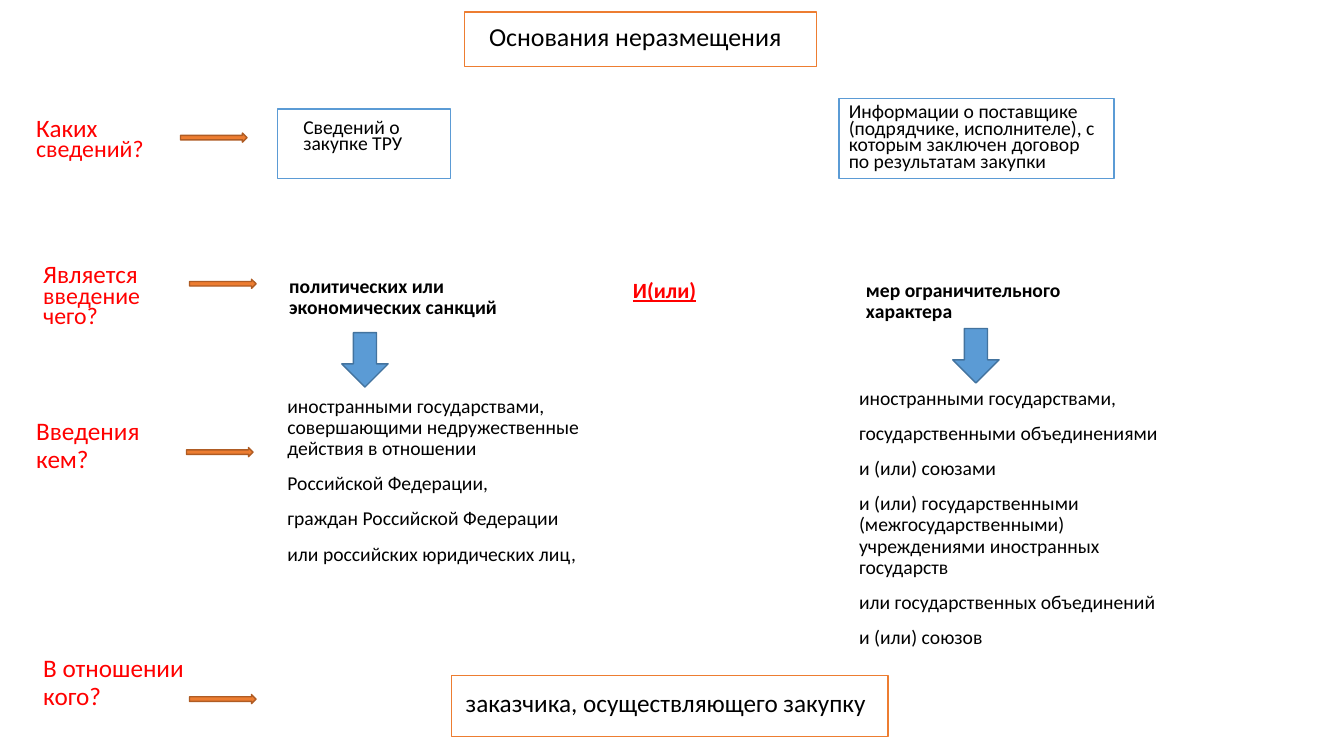
from pptx import Presentation
from pptx.dml.color import RGBColor
from pptx.enum.shapes import MSO_SHAPE
from pptx.enum.text import MSO_ANCHOR, MSO_AUTO_SIZE, PP_ALIGN
from pptx.oxml.ns import qn
from pptx.util import Inches, Pt

COLORS = {
    "white": "FFFFFF", "black": "000000", "red": "FF0000",
    "orange": "ED7D31", "brown": "AF5C24", "blue": "5B9BD5", "navy": "43739E",
}
TITLE = "Основания неразмещения"
TITLE_BOX = (4.75, 0.19, 3.28, 0.47)
TITLE_FRAME = (4.61, 0.12, 3.49, 0.54)

QUESTIONS = [
    ([("Каких", 17.9), (" сведений?", 17)], (0.26, 1.15, 1.46, 0.54), 0.7, (1.79, 1.32)),
    ([("Является", 17.9), (" введение чего?", 17)], (0.33, 2.6, 1.65, 0.74), 0.7, (1.88, 2.77)),
    ([("Введения кем?", 18)], (0.26, 4.11, 1.65, 0.74), 0.9, (1.85, 4.44)),
    ([("В отношении кого?", 18)], (0.33, 6.46, 1.65, 0.74), 0.9, (1.88, 6.89)),
]
SUBJECT = "Сведений о закупке ТРУ"
SUPPLIER = ("Информации о поставщике (подрядчике, исполнителе), "
            "с которым заключен договор по результатам закупки")
MEASURES = [
    ("политических или экономических санкций", (2.77, 2.69), (3.39, 3.3)),
    ("мер ограничительного характера", (8.49, 2.73), (9.45, 3.26)),
]
CHOICE = "И(или)"
IMPOSERS = [
    (["иностранными государствами, совершающими недружественные действия в отношении",
      "Российской Федерации,",
      "граждан Российской Федерации",
      "или российских юридических лиц,"], (2.75, 3.88, 3.28, 2.2)),
    (["иностранными государствами,",
      "государственными объединениями",
      "и (или) союзами",
      "и (или) государственными (межгосударственными) учреждениями иностранных государств",
      "или государственных объединений",
      "и (или) союзов"], (8.42, 3.8, 3.28, 2.09)),
]
CUSTOMER = "заказчика, осуществляющего закупку"

prs = Presentation()
prs.slide_width, prs.slide_height = Inches(13.33), Inches(7.5)
s = prs.slides.add_slide(prs.slide_layouts[3])


def rgb(name):
    return RGBColor.from_string(COLORS[name])


def place(sp, box):
    sp.left, sp.top, sp.width, sp.height = [Inches(v) for v in box]


def write(sp, paragraphs, color="black", spacing=0.9, before=10,
          bold=False, underline=False, anchor=MSO_ANCHOR.TOP):
    tf = sp.text_frame
    tf.word_wrap = True
    tf.auto_size = MSO_AUTO_SIZE.NONE
    tf.vertical_anchor = anchor
    for i, runs in enumerate(paragraphs):
        p = tf.add_paragraph() if i else tf.paragraphs[0]
        p.alignment = PP_ALIGN.LEFT
        p.line_spacing = spacing
        p.space_before = Pt(before)
        for text, size in runs:
            r = p.add_run()
            r.text = text
            r.font.name = "Calibri"
            r.font.size = Pt(size)
            r.font.bold = bold
            r.font.underline = underline
            r.font.color.rgb = rgb(color)


def label(runs, box, **style):
    sp = s.shapes.add_textbox(*[Inches(v) for v in box])
    write(sp, [runs], **style)


def shape(kind, box, fill, line):
    sp = s.shapes.add_shape(kind, *[Inches(v) for v in box])
    sp.shadow.inherit = False
    sp.fill.solid()
    sp.fill.fore_color.rgb = rgb(fill)
    sp.line.color.rgb = rgb(line)
    sp.line.width = Pt(1)
    return sp


def main():
    title, *lists = s.placeholders
    frame = shape(MSO_SHAPE.RECTANGLE, TITLE_FRAME, "white", "orange")
    title._element.addprevious(frame._element)
    place(title, TITLE_BOX)
    write(title, [[(TITLE, 18.5)]])

    for sp, (lines, box) in zip(lists, IMPOSERS):
        place(sp, box)
        write(sp, [[(text, 14)] for text in lines])
        for p in sp.text_frame.paragraphs:
            pPr = p._p.get_or_add_pPr()
            pPr.set("marL", "0")
            pPr.set("indent", "0")
            pPr.append(pPr.makeelement(qn("a:buNone"), {}))

    shape(MSO_SHAPE.RECTANGLE, (2.75, 1.08, 1.72, 0.69), "white", "blue")
    label([(SUBJECT, 14)], (2.91, 1.15, 1.27, 0.47), spacing=0.7)
    supplier = shape(MSO_SHAPE.RECTANGLE, (8.32, 0.98, 2.73, 0.79), "white", "blue")
    write(supplier, [[(SUPPLIER, 14)]], spacing=0.7, anchor=MSO_ANCHOR.MIDDLE)

    for runs, box, spacing, arrow in QUESTIONS:
        label(runs, box, color="red", spacing=spacing)
        shape(MSO_SHAPE.RIGHT_ARROW, (*arrow, 0.66, 0.09), "orange", "brown")

    for text, corner, arrow in MEASURES:
        label([(text, 14)], (*corner, 2.84, 0.47), bold=True)
        shape(MSO_SHAPE.DOWN_ARROW, (*arrow, 0.46, 0.54), "blue", "navy")
    label([(CHOICE, 15.5)], (6.18, 2.77, 0.86, 0.47), color="red", spacing=0.7,
          bold=True, underline=True)

    shape(MSO_SHAPE.RECTANGLE, (4.48, 6.7, 4.33, 0.61), "white", "orange")
    label([(CUSTOMER, 18)], (4.52, 6.77, 4.29, 0.4), spacing=1.0, before=0)
    prs.save("out.pptx")


if __name__ == "__main__":
    main()
